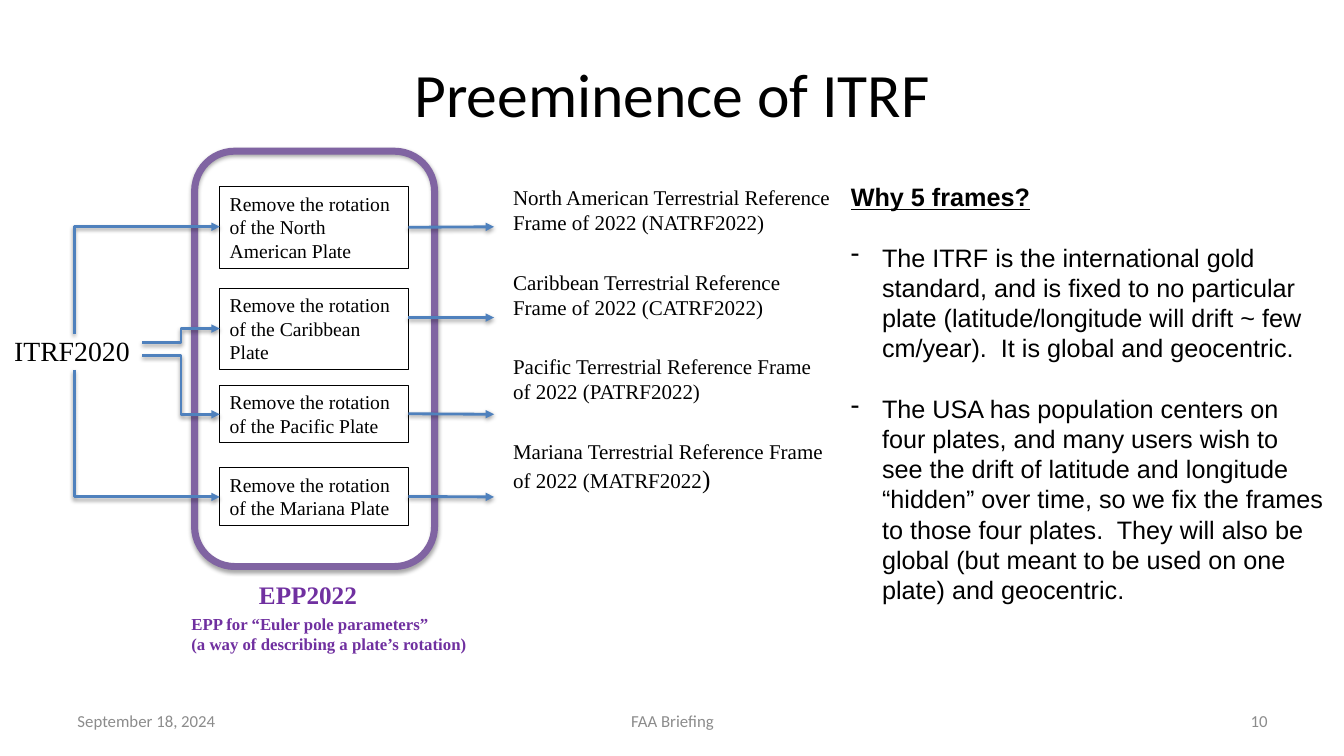
from dataclasses import dataclass

from lxml import etree
from pptx import Presentation
from pptx import util as u
from pptx.dml.color import RGBColor
from pptx.enum import shapes, text
from pptx.oxml import parse_xml
from pptx.oxml.ns import nsdecls, qn

COLORS = {"ink": "000000", "muted": "8C8C8C", "arrow": "4F81BD",
          "frame": "8064A2", "epp": "7030A0"}
SERIF, SANS, THEME = "Times New Roman", "Arial", "Calibri"
LEFT, CENTER, RIGHT = text.PP_ALIGN.LEFT, text.PP_ALIGN.CENTER, text.PP_ALIGN.RIGHT
BOX_LEFT, BOX_WIDTH, ARROW_END = 2.18, 1.87, 4.9


@dataclass
class Style:
    font: str
    size: float
    color: str = "ink"
    bold: bool = False
    align: text.PP_ALIGN = LEFT
    gap: float = 0


@dataclass
class Label:
    area: tuple[float, float, float, float]
    lines: list[str]
    style: Style
    wrap: bool = True
    middle: bool = False
    inset: bool = True


@dataclass
class Plate:
    name: str
    top: float
    height: float
    arrow_y: float
    joined: bool = True


@dataclass
class Elbow:
    start: tuple[float, float]
    end_y: float
    bend: int


PLATES = [
    Plate("North American", 1.85, 0.81, 2.25),
    Plate("Caribbean", 2.86, 0.81, 3.15, joined=False),
    Plate("Pacific", 3.82, 0.57, 4.11),
    Plate("Mariana", 4.64, 0.57, 4.93),
]
ELBOWS = [
    Elbow((0.74, 3.31), 2.25, 0),
    Elbow((1.41, 3.4), 3.26, 50000),
    Elbow((0.74, 3.67), 4.93, 0),
    Elbow((1.41, 3.53), 4.11, 50000),
]
FRAMES = [
    "North American Terrestrial Reference Frame of 2022 (NATRF2022)",
    "Caribbean Terrestrial Reference Frame of 2022 (CATRF2022)",
    "Pacific Terrestrial Reference Frame of 2022 (PATRF2022)",
    "Mariana Terrestrial Reference Frame of 2022 (MATRF2022",
]
REASONS = [
    "Why 5 frames?",
    "The ITRF is the international gold standard, and is fixed to no particular plate "
    "(latitude/longitude will drift ~ few cm/year).  It is global and geocentric.",
    "The USA has population centers on four plates, and many users wish to see the drift "
    "of latitude and longitude “hidden” over time, so we fix the frames to those four "
    "plates.  They will also be global (but meant to be used on one plate) and geocentric.",
]
EPP_NOTE = ["EPP for “Euler pole parameters”", "(a way of describing a plate’s rotation)"]
FRAME_LABEL = Label((4.99, 1.78, 3.35, 3.94), FRAMES, Style(SERIF, 15, gap=24.5))
REASON_LABEL = Label((8.34, 1.75, 4.9, 4.34), REASONS, Style(SANS, 18, gap=21.6))
LABELS = [
    Label((0.14, 3.31, 1.19, 0.36), ["ITRF2020"], Style(SERIF, 19.8), wrap=False, inset=False),
    Label((2.47, 5.7, 1.18, 0.4), ["EPP2022"], Style(SERIF, 18, "epp", True), wrap=False),
    Label((1.8, 6.04, 2.96, 0.5), EPP_NOTE, Style(SERIF, 12, "epp", True), wrap=False),
    Label((0.67, 6.95, 3.11, 0.4), ["September 18, 2024"], Style(THEME, 12, "muted"), middle=True),
    Label((4.56, 6.95, 4.22, 0.4), ["FAA Briefing"],
          Style(THEME, 12, "muted", align=CENTER), middle=True),
    Label((9.56, 6.95, 3.11, 0.4), ["10"], Style(THEME, 12, "muted", align=RIGHT), middle=True),
]


def color(name: str) -> RGBColor:
    return RGBColor.from_string(COLORS[name])


def inches(*lengths: float) -> list[u.Length]:
    return [u.Inches(length) for length in lengths]


def write(text_frame, lines: list[str], style: Style) -> None:
    text_frame.text = "\n".join(lines)
    for index, paragraph in enumerate(text_frame.paragraphs):
        paragraph.alignment = style.align
        if index and style.gap:
            paragraph.space_before = u.Pt(style.gap)
        for run in paragraph.runs:
            run.font.name = style.font
            run.font.size = u.Pt(style.size)
            run.font.bold = style.bold
            run.font.color.rgb = color(style.color)


def add_label(slide, label: Label):
    text_frame = slide.shapes.add_textbox(*inches(*label.area)).text_frame
    text_frame.word_wrap = label.wrap
    if label.middle:
        text_frame.vertical_anchor = text.MSO_ANCHOR.MIDDLE
    if not label.inset:
        text_frame.margin_left = text_frame.margin_right = 0
        text_frame.margin_top = text_frame.margin_bottom = 0
    write(text_frame, label.lines, label.style)
    return text_frame


def add_shadow(shape, blur: float, distance: float, alpha: int) -> None:
    properties = shape._element.spPr
    for effects in properties.findall(qn("a:effectLst")):
        properties.remove(effects)
    properties.append(parse_xml(
        f'<a:effectLst {nsdecls("a")}><a:outerShdw blurRad="{u.Pt(blur)}" '
        f'dist="{u.Pt(distance)}" dir="5400000" rotWithShape="0"><a:srgbClr val="000000">'
        f'<a:alpha val="{alpha * 1000}"/></a:srgbClr></a:outerShdw></a:effectLst>'))


def add_outline(slide, kind, area: tuple, line_color: str, width: float):
    shape = slide.shapes.add_shape(kind, *inches(*area))
    shape.shadow.inherit = False
    shape.fill.background()
    shape.line.color.rgb = color(line_color)
    shape.line.width = u.Pt(width)
    return shape


def add_plate(slide, plate: Plate):
    area = (BOX_LEFT, plate.top, BOX_WIDTH, plate.height)
    box = add_outline(slide, shapes.MSO_SHAPE.RECTANGLE, area, "ink", 0.75)
    box.text_frame.vertical_anchor = text.MSO_ANCHOR.TOP
    write(box.text_frame, [f"Remove the rotation of the {plate.name} Plate"], Style(SERIF, 14))
    return box


def add_arrow(slide, kind, start: tuple, end: tuple):
    connector = slide.shapes.add_connector(kind, *inches(*start, *end))
    connector.line.color.rgb = color("arrow")
    connector.line.width = u.Pt(2)
    etree.SubElement(connector.line._get_or_add_ln(), qn("a:tailEnd"), type="triangle")
    add_shadow(connector, 3.1, 1.6, 38)
    return connector


def add_elbow(slide, elbow: Elbow) -> None:
    connector = add_arrow(slide, shapes.MSO_CONNECTOR.ELBOW, elbow.start, (BOX_LEFT, elbow.end_y))
    adjustments = connector._element.spPr.find(qn("a:prstGeom")).find(qn("a:avLst"))
    etree.SubElement(adjustments, qn("a:gd"), name="adj1", fmla=f"val {elbow.bend}")


def add_reasons(slide) -> None:
    heading, *bullets = add_label(slide, REASON_LABEL).paragraphs
    heading.runs[0].font.bold = heading.runs[0].font.underline = True
    for paragraph in bullets:
        properties = paragraph._p.get_or_add_pPr()
        properties.set("marL", str(u.Inches(0.31)))
        properties.set("indent", str(u.Inches(-0.31)))
        etree.SubElement(properties, qn("a:buChar"), char="-")


def main() -> None:
    presentation = Presentation()
    presentation.slide_width, presentation.slide_height = inches(13.33, 7.5)
    slide = presentation.slides.add_slide(presentation.slide_layouts[5])
    title = slide.shapes.title
    title.left, title.top, title.width, title.height = inches(0.67, 0.3, 12, 1.25)
    write(title.text_frame, ["Preeminence of ITRF"], Style(THEME, 44, align=CENTER))

    closing = add_label(slide, FRAME_LABEL).paragraphs[-1].add_run()
    closing.text = ")"
    closing.font.name, closing.font.size = SERIF, u.Pt(18)
    closing.font.color.rgb = color("ink")

    boxes = [add_plate(slide, plate) for plate in PLATES]
    group = add_outline(slide, shapes.MSO_SHAPE.ROUNDED_RECTANGLE, (1.93, 1.5, 2.38, 4.12), "frame", 5)
    add_shadow(group, 3.1, 1.8, 35)
    for elbow in ELBOWS:
        add_elbow(slide, elbow)
    for plate, box in zip(PLATES, boxes):
        arrow = add_arrow(slide, shapes.MSO_CONNECTOR.STRAIGHT,
                          (BOX_LEFT + BOX_WIDTH, plate.arrow_y), (ARROW_END, plate.arrow_y))
        if plate.joined:
            arrow.begin_connect(box, 3)
    for label in LABELS:
        add_label(slide, label)
    add_reasons(slide)
    presentation.save("out.pptx")


if __name__ == "__main__":
    main()
